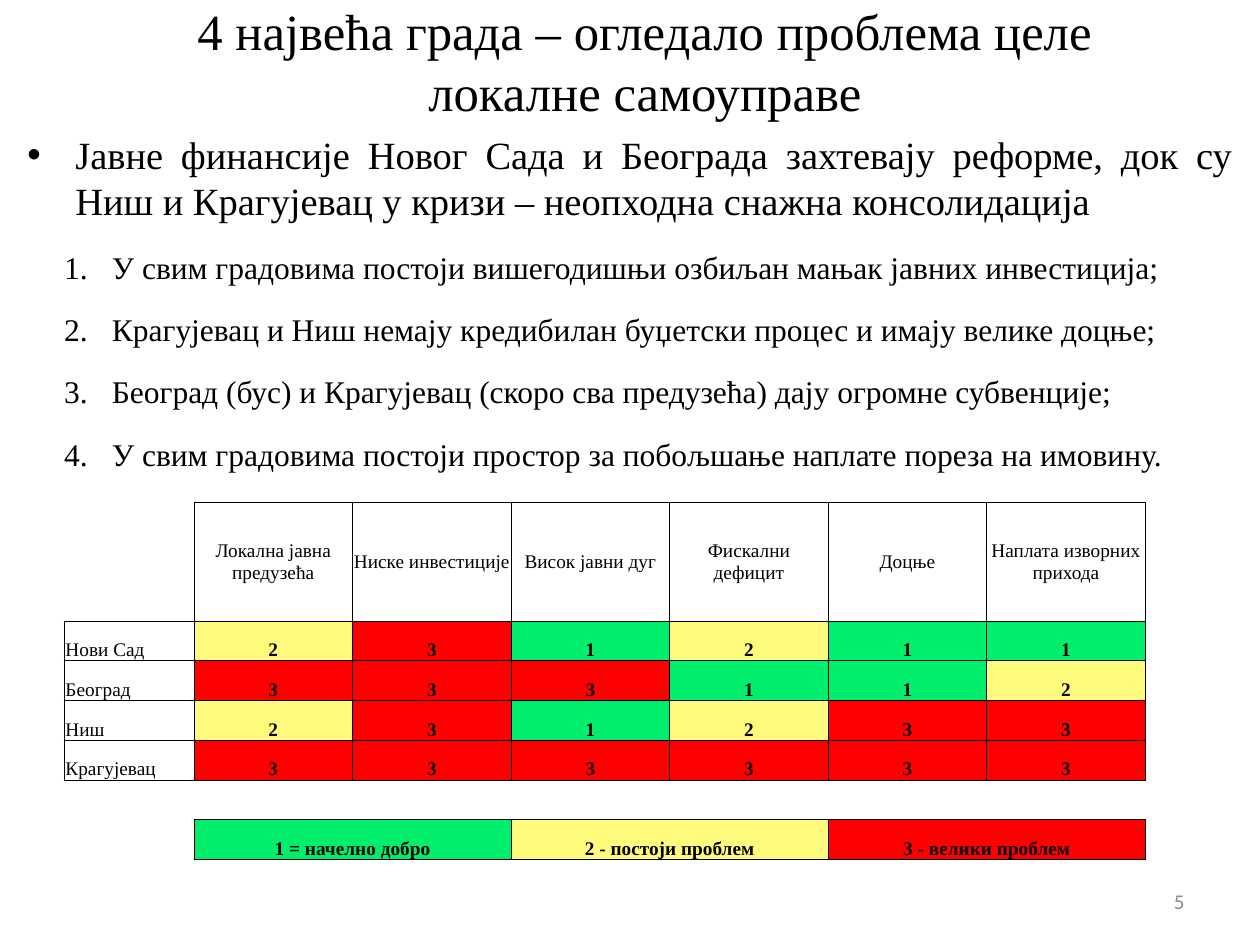
from dataclasses import dataclass

from lxml import etree
from pptx import Presentation
from pptx import util as u
from pptx.dml.color import RGBColor
from pptx.enum import text
from pptx.oxml import ns

ALIGN, ANCHOR = text.PP_ALIGN, text.MSO_ANCHOR


@dataclass(frozen=True)
class Theme:
    serif: str = "Times New Roman"
    sans: str = "Calibri"
    ink: str = "000000"
    gray: str = "8C8C8C"
    paper: str = "FFFFFF"
    good: str = "00EE6C"
    warning: str = "FFFC7D"
    bad: str = "FF0000"
    title: float = 29
    lead: float = 22
    item: float = 18
    cell: float = 11
    number: float = 12
    border: float = 0.5


THEME = Theme()
RATING_FILL = {1: THEME.good, 2: THEME.warning, 3: THEME.bad}

TITLE = "4 највећа града – огледало проблема целе локалне самоуправе"
LEAD = ("Јавне финансије Новог Сада и Београда захтевају реформе, "
        "док су Ниш и Крагујевац у кризи – неопходна снажна консолидација")
FINDINGS = [
    "У свим градовима постоји вишегодишњи озбиљан мањак јавних инвестиција;",
    "Крагујевац и Ниш немају кредибилан буџетски процес и имају велике доцње;",
    "Београд (бус) и Крагујевац (скоро сва предузећа) дају огромне субвенције;",
    "У свим градовима постоји простор за побољшање наплате пореза на имовину.",
]
PROBLEMS = ["Локална јавна предузећа", "Ниске инвестиције", "Висок јавни дуг",
            "Фискални дефицит", "Доцње", "Наплата изворних прихода"]
RATINGS = {
    "Нови Сад": [2, 3, 1, 2, 1, 1],
    "Београд": [3, 3, 3, 1, 1, 2],
    "Ниш": [2, 3, 1, 2, 3, 3],
    "Крагујевац": [3, 3, 3, 3, 3, 3],
}
LEGEND = {1: "1 = начелно добро", 2: "2 - постоји проблем", 3: "3 - велики проблем"}


def inches(box):
    return [u.Inches(length) for length in box]


def format_paragraph(paragraph, size, align, font=THEME.serif, color=THEME.ink, bold=False):
    paragraph.alignment = align
    for run in paragraph.runs:
        run.font.name, run.font.size, run.font.bold = font, u.Pt(size), bold
        run.font.color.rgb = RGBColor.from_string(color)


def set_bullet(paragraph, indent, tag, **attributes):
    properties = paragraph._p.get_or_add_pPr()
    properties.set("marL", str(u.Inches(indent)))
    properties.set("indent", str(u.Inches(-0.38)))
    etree.SubElement(properties, ns.qn("a:buFont"), typeface="Arial" if tag == "a:buChar" else "+mj-lt")
    etree.SubElement(properties, ns.qn(tag), **attributes)


def place_title(slide, box):
    title = slide.shapes.title
    title.left, title.top, title.width, title.height = inches(box)
    frame = title.text_frame
    frame.text = TITLE
    frame.vertical_anchor = ANCHOR.MIDDLE
    format_paragraph(frame.paragraphs[0], THEME.title, ALIGN.CENTER)


def place_findings(slide, box):
    frame = slide.shapes.add_textbox(*inches(box)).text_frame
    frame.word_wrap = True
    frame.text = "\n".join([LEAD, *FINDINGS])
    lead, *findings = frame.paragraphs
    for paragraph in frame.paragraphs:
        paragraph.space_before = paragraph.space_after = u.Pt(7)
        format_paragraph(paragraph, THEME.item, ALIGN.JUSTIFY)
    format_paragraph(lead, THEME.lead, ALIGN.JUSTIFY)
    set_bullet(lead, 0.38, "a:buChar", char="•")
    for finding in findings:
        finding.level = 1
        set_bullet(finding, 0.67, "a:buAutoNum", type="arabicPeriod")


def outline_cell(cell):
    properties = cell._tc.get_or_add_tcPr()
    for index, side in enumerate(("a:lnL", "a:lnR", "a:lnT", "a:lnB")):
        line = etree.Element(ns.qn(side), w=str(u.Pt(THEME.border)))
        fill = etree.SubElement(line, ns.qn("a:solidFill"))
        etree.SubElement(fill, ns.qn("a:srgbClr"), val=THEME.ink)
        properties.insert(index, line)


def fill_cell(cell, label, fill=THEME.paper, align=ALIGN.CENTER, anchor=ANCHOR.BOTTOM, bold=False):
    cell.text = label
    cell.vertical_anchor = anchor
    cell.fill.solid()
    cell.fill.fore_color.rgb = RGBColor.from_string(fill)
    format_paragraph(cell.text_frame.paragraphs[0], THEME.cell, align, bold=bold)
    outline_cell(cell)


def place_ratings(slide, box):
    left, top, width, height = box
    city_width, header_height = 1.03, 0.94
    row_count, column_count = len(RATINGS) + 3, len(PROBLEMS) + 1
    table = slide.shapes.add_table(row_count, column_count, *inches(box)).table
    table.first_row = table.horz_banding = False
    # "No Style, No Grid"
    table._tbl.tblPr.find(ns.qn("a:tableStyleId")).text = "{2D5ABB26-0587-4C30-8999-92F81FD0307C}"

    # Grid: one city column and one header row, the rest equal
    for index, column in enumerate(table.columns):
        column.width = u.Inches((width - city_width) / (column_count - 1) if index else city_width)
    for index, row in enumerate(table.rows):
        row.height = u.Inches((height - header_height) / (row_count - 1) if index else header_height)
    for cell in table.iter_cells():
        cell.margin_left = cell.margin_right = u.Inches(0.01)
        cell.margin_top = cell.margin_bottom = 0
        cell.fill.background()

    # Header and city rows
    for column, problem in enumerate(PROBLEMS, 1):
        fill_cell(table.cell(0, column), problem, anchor=ANCHOR.MIDDLE)
    for row, (city, ratings) in enumerate(RATINGS.items(), 1):
        fill_cell(table.cell(row, 0), city, align=ALIGN.LEFT)
        for column, rating in enumerate(ratings, 1):
            fill_cell(table.cell(row, column), str(rating), RATING_FILL[rating], bold=True)

    # Legend: each entry spans two columns of the last row
    for rating, meaning in LEGEND.items():
        first, second = (table.cell(row_count - 1, 2 * rating - step) for step in (1, 0))
        first.merge(second)
        fill_cell(first, meaning, RATING_FILL[rating], bold=True)
        outline_cell(second)


def place_slide_number(slide, box):
    frame = slide.shapes.add_textbox(*inches(box)).text_frame
    frame.word_wrap = True
    frame.text = "5"
    frame.vertical_anchor = ANCHOR.MIDDLE
    format_paragraph(frame.paragraphs[0], THEME.number, ALIGN.RIGHT, THEME.sans, THEME.gray)


def main():
    deck = Presentation()
    deck.slide_width, deck.slide_height = inches((10, 7.5))
    slide = deck.slides.add_slide(deck.slide_layouts[5])
    place_title(slide, (0.75, 0.13, 8.74, 0.71))
    place_findings(slide, (0.12, 0.99, 9.76, 6.39))
    place_slide_number(slide, (7.17, 6.95, 2.33, 0.4))
    place_ratings(slide, (0.51, 3.99, 8.58, 2.83))
    deck.save("out.pptx")


if __name__ == "__main__":
    main()
